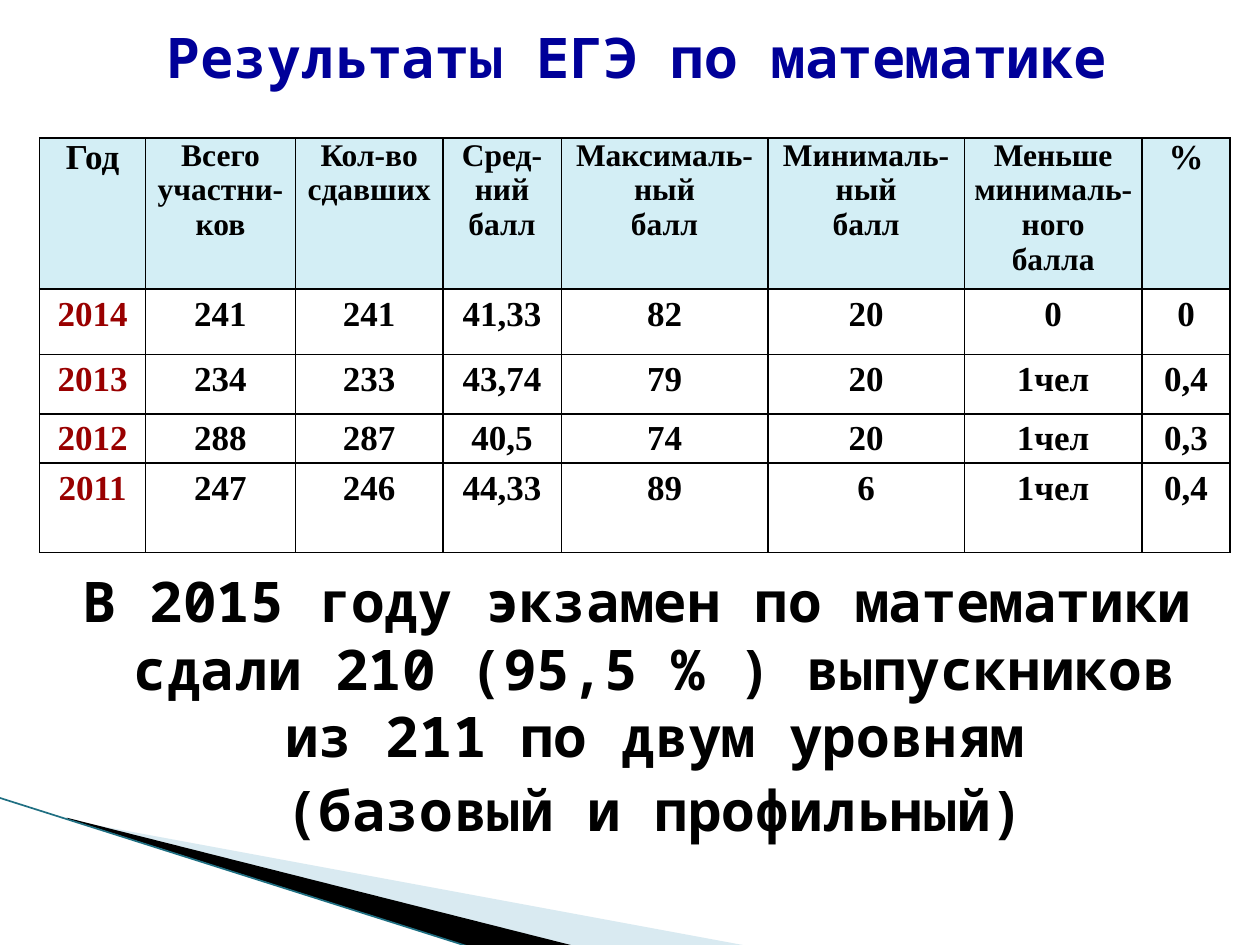
"""Build the slide with the mathematics exam results by year."""
import pptx
import pptx.dml.color
import pptx.enum.shapes
import pptx.enum.text
import pptx.oxml.ns
import pptx.util
from lxml import etree
from pptx.util import Inches, Pt

SANS, SERIF = "Noto Sans Mono", "Times New Roman"
BLACK, NAVY, RED, PALE_BLUE = "000000", "000099", "990000", "D3EEF5"

TITLE = "Результаты ЕГЭ по математике"
SUMMARY = [
    "В 2015 году экзамен по математики сдали 210 (95,5 % ) выпускников из 211 по двум уровням",
    "(базовый и профильный)",
]
HEADINGS = [
    "Год", "Всего\nучастни-ков", "Кол-во\nсдавших", "Сред-ний балл",
    "Максималь-\nный\nбалл", "Минималь-\nный\nбалл",
    "Меньше минималь-ного\nбалла", "%",
]
RESULTS = [
    ["2014", "241", "241", "41,33", "82", "20", "0", "0"],
    ["2013", "234", "233", "43,74", "79", "20", "1чел", "0,4"],
    ["2012", "288", "287", "40,5", "74", "20", "1чел", "0,3"],
    ["2011", "247", "246", "44,33", "89", "6", "1чел", "0,4"],
]
COLUMN_WIDTHS = [0.84, 1.19, 1.17, 0.94, 1.64, 1.56, 1.41, 0.7]
ROW_HEIGHTS = [1.2, 0.52, 0.47, 0.39, 0.71]
SWOOSHES = [
    ((0.78, 5.47, 4.16, 1.58),
     [(0.55, 6.51), (5.95, 7.51), (4.56, 7.51), (0.55, 6.5)], "A0CBDC", 40),
    ((-0.06, 6.33, 4.16, 0.92),
     [(0.53, 6.49), (4.57, 7.51), (3.72, 7.51), (0.54, 6.5)], BLACK, 100),
]


def rgb(color):
    return pptx.dml.color.RGBColor.from_string(color)


def add_xml(parent, tag, **attributes):
    return etree.SubElement(parent, pptx.oxml.ns.qn(tag), attributes)


def style(paragraph, font_name, size, color):
    paragraph.alignment = pptx.enum.text.PP_ALIGN.CENTER
    font = paragraph.font
    font.name, font.size, font.bold = font_name, Pt(size), True
    font.color.rgb = rgb(color)


def set_frame(swoosh, frame, corners):
    """Give the outline a frame that its corners may reach beyond."""
    left, top, width, height = (Inches(length) for length in frame)
    swoosh.left, swoosh.top, swoosh.width, swoosh.height = left, top, width, height
    outline = swoosh._element.spPr.find(".//" + pptx.oxml.ns.qn("a:path"))
    outline.set("w", str(width))
    outline.set("h", str(height))
    for point, (x, y) in zip(outline.iter(pptx.oxml.ns.qn("a:pt")), corners):
        point.set("x", str(x - left))
        point.set("y", str(y - top))


def add_swoosh(slide, frame, points, color, opacity):
    corners = [(Inches(x), Inches(y)) for x, y in points]
    builder = slide.shapes.build_freeform(*corners[0])
    builder.add_line_segments(corners[1:], close=False)
    swoosh = builder.convert_to_shape()
    set_frame(swoosh, frame, corners)
    swoosh.shadow.inherit = False
    swoosh.line.fill.background()
    swoosh.fill.solid()
    swoosh.fill.fore_color.rgb = rgb(color)
    if opacity < 100:
        swatch = swoosh._element.spPr.find(".//" + pptx.oxml.ns.qn("a:srgbClr"))
        add_xml(swatch, "a:alpha", val=str(opacity * 1000))


def add_edge(slide):
    edge = slide.shapes.add_connector(
        pptx.enum.shapes.MSO_CONNECTOR.STRAIGHT,
        Inches(-0.01), Inches(6.33), Inches(3.71), Inches(7.51))
    edge.line.color.rgb = rgb("1F6F82")
    edge.line.width = Pt(0.95)
    add_xml(edge._element.spPr, "a:effectLst")


def add_text(slide, top, height, lines, color, spacing=None):
    frame = slide.shapes.add_textbox(
        Inches(0.31), Inches(top), Inches(9.38), Inches(height)).text_frame
    frame.word_wrap = True
    frame.text = "\n".join(lines)
    for index, paragraph in enumerate(frame.paragraphs):
        properties = paragraph._p.get_or_add_pPr()
        properties.set("marL", str(Inches(0.4)))
        properties.set("indent", str(0 if index else Inches(-0.28)))
        style(paragraph, SANS, 32, color)
        if spacing:
            paragraph.line_spacing = spacing
        if index:
            paragraph.space_before = Pt(4)


def fill_cell(cell, text, size, color, spacing, fill):
    cell.margin_left = cell.margin_right = Inches(0.07)
    cell.margin_top = cell.margin_bottom = 0
    cell.text = text
    for paragraph in cell.text_frame.paragraphs:
        style(paragraph, SERIF, size, color)
        paragraph.line_spacing = spacing
    properties = cell._tc.get_or_add_tcPr()
    for side in ("a:lnL", "a:lnR", "a:lnT", "a:lnB"):
        border = add_xml(properties, side, w=str(Pt(1)))
        add_xml(add_xml(border, "a:solidFill"), "a:srgbClr", val=BLACK)
    if fill:
        cell.fill.solid()
        cell.fill.fore_color.rgb = rgb(fill)
    else:
        cell.fill.background()


def add_results(slide):
    table = slide.shapes.add_table(
        len(ROW_HEIGHTS), len(COLUMN_WIDTHS), Pt(22.7), Pt(78.8),
        Inches(sum(COLUMN_WIDTHS)), Inches(sum(ROW_HEIGHTS))).table
    table.first_row = table.horz_banding = False
    for column, width in zip(table.columns, COLUMN_WIDTHS):
        column.width = Inches(width)
    for row, height in zip(table.rows, ROW_HEIGHTS):
        row.height = Inches(height)
    for index, heading in enumerate(HEADINGS):
        size = 20 if heading in ("Год", "%") else 18
        fill_cell(table.cell(0, index), heading, size, BLACK, 1.0, PALE_BLUE)
    for row_index, result in enumerate(RESULTS, start=1):
        for index, value in enumerate(result):
            color = BLACK if index else RED
            fill_cell(table.cell(row_index, index), value, 20, color, 1.15, None)


def main():
    presentation = pptx.Presentation()
    presentation.slide_width, presentation.slide_height = Inches(10), Inches(7.5)
    slide = presentation.slides.add_slide(presentation.slide_layouts[6])
    for swoosh in SWOOSHES:
        add_swoosh(slide, *swoosh)
    add_edge(slide)
    add_text(slide, 0.23, 0.7, [TITLE], NAVY, spacing=0.8)
    add_results(slide)
    add_text(slide, 4.45, 2.81, SUMMARY, BLACK)
    presentation.save("out.pptx")


if __name__ == "__main__":
    main()
